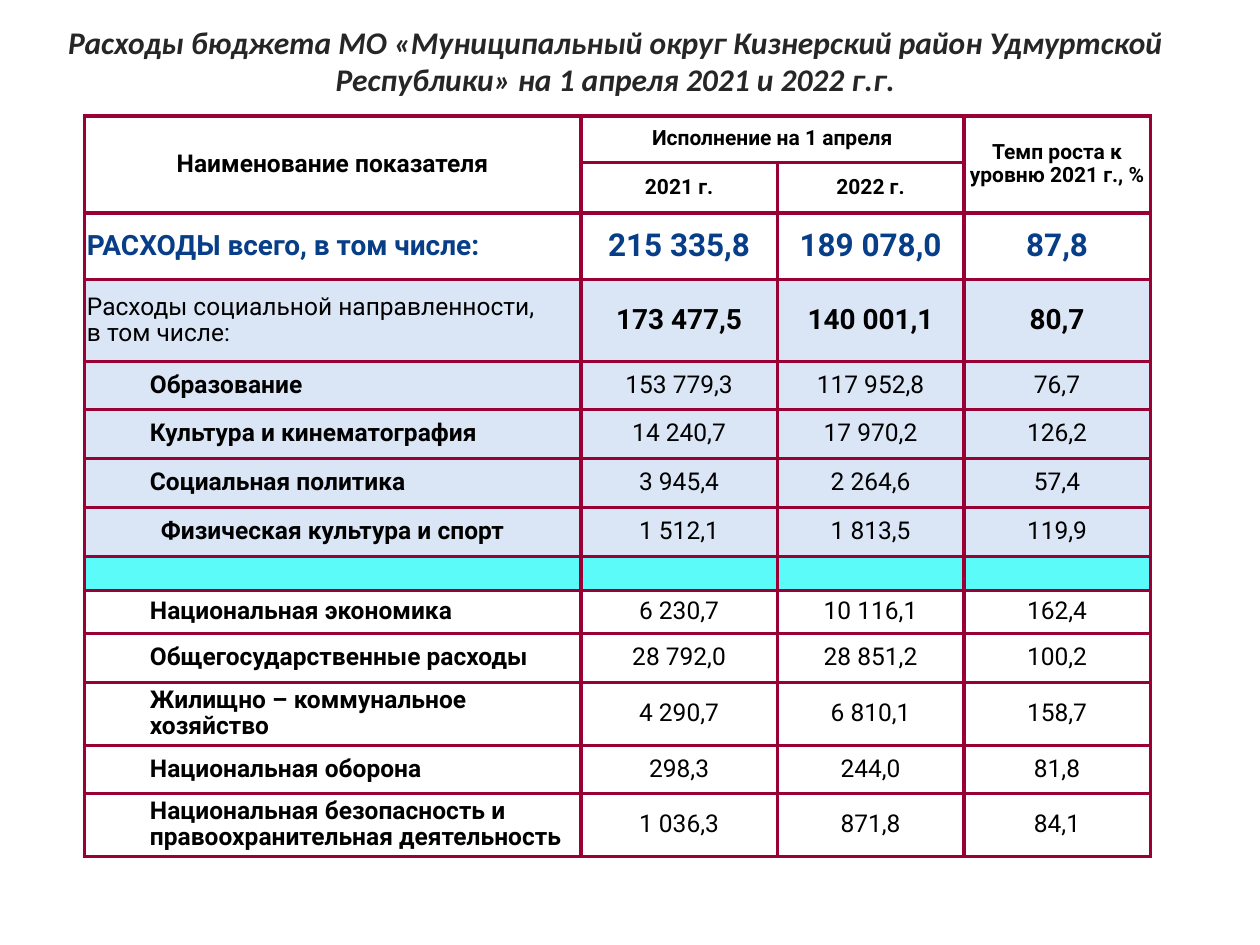
from dataclasses import dataclass

from lxml.etree import SubElement
from pptx import Presentation
from pptx.dml.color import RGBColor
from pptx.enum.text import MSO_ANCHOR as Anchor, MSO_AUTO_SIZE as AutoSize, PP_ALIGN as Align
from pptx.oxml.ns import qn
from pptx.table import Table, _Cell as Cell
from pptx.util import Inches, Pt

WHITE = RGBColor(0xFF, 0xFF, 0xFF)
BLACK = RGBColor(0x00, 0x00, 0x00)
CHARCOAL = RGBColor(0x26, 0x26, 0x26)
NAVY = RGBColor(0x07, 0x3E, 0x87)
PALE_BLUE = RGBColor(0xDA, 0xE6, 0xF6)
CYAN = RGBColor(0x5A, 0xFB, 0xF8)
CRIMSON = RGBColor(0x99, 0x00, 0x33)

TITLE = ("Расходы бюджета МО «Муниципальный округ Кизнерский район Удмуртской "
         "Республики» на 1 апреля 2021 и 2022 г.г.")
COLUMN_WIDTHS = (3.94, 1.56, 1.48, 1.48)
HEADER_HEIGHT = 0.37
HEADER_ROWS = 2
CELL_MARGIN = Inches(0.02)


@dataclass(frozen=True)
class TextStyle:
    size: int = 14
    bold: bool = False
    color: RGBColor = BLACK
    align: Align = Align.CENTER
    indented: bool = False


FIGURE = TextStyle()
ITEM = TextStyle(bold=True, align=Align.LEFT, indented=True)
CENTERED_ITEM = TextStyle(bold=True)
SMALL_HEADER = TextStyle(size=12, bold=True)
TOTAL = TextStyle(size=16, bold=True, color=NAVY, align=Align.LEFT)
TOTAL_FIGURE = TextStyle(size=18, bold=True, color=NAVY)
SUBTOTAL = TextStyle(align=Align.LEFT)
SUBTOTAL_FIGURE = TextStyle(size=16, bold=True)
SPACER = TextStyle(size=8)


@dataclass(frozen=True)
class HeaderCell:
    text: str
    row: int
    column: int
    last_row: int
    last_column: int
    style: TextStyle = SMALL_HEADER


@dataclass(frozen=True)
class BudgetRow:
    height: float
    label: str
    figures: tuple[str, str, str]
    fill: RGBColor = WHITE
    label_style: TextStyle = ITEM
    figure_style: TextStyle = FIGURE


HEADERS = (
    HeaderCell("Наименование показателя", 0, 0, 1, 0, CENTERED_ITEM),
    HeaderCell("Исполнение на 1 апреля", 0, 1, 0, 2),
    HeaderCell("Темп роста к уровню 2021 г., %", 0, 3, 1, 3),
    HeaderCell("2021 г.", 1, 1, 1, 1),
    HeaderCell("2022 г.", 1, 2, 1, 2),
)

BUDGET_ROWS = (
    BudgetRow(0.53, "РАСХОДЫ всего, в том числе:", ("215 335,8", "189 078,0", "87,8"),
              WHITE, TOTAL, TOTAL_FIGURE),
    BudgetRow(0.65, "Расходы социальной направленности,\nв том числе:",
              ("173 477,5", "140 001,1", "80,7"), PALE_BLUE, SUBTOTAL, SUBTOTAL_FIGURE),
    BudgetRow(0.38, "Образование", ("153 779,3", "117 952,8", "76,7"), PALE_BLUE),
    BudgetRow(0.39, "Культура и кинематография", ("14 240,7", "17 970,2", "126,2"), PALE_BLUE),
    BudgetRow(0.39, "Социальная политика", ("3 945,4", "2 264,6", "57,4"), PALE_BLUE),
    BudgetRow(0.39, "Физическая культура и спорт", ("1 512,1", "1 813,5", "119,9"),
              PALE_BLUE, CENTERED_ITEM),
    BudgetRow(0.27, "", ("", "", ""), CYAN, SPACER, SPACER),
    BudgetRow(0.34, "Национальная экономика", ("6 230,7", "10 116,1", "162,4")),
    BudgetRow(0.39, "Общегосударственные расходы", ("28 792,0", "28 851,2", "100,2")),
    BudgetRow(0.5, "Жилищно – коммунальное хозяйство", ("4 290,7", "6 810,1", "158,7")),
    BudgetRow(0.38, "Национальная оборона", ("298,3", "244,0", "81,8")),
    BudgetRow(0.5, "Национальная безопасность и правоохранительная деятельность",
              ("1 036,3", "871,8", "84,1")),
)


def frame_cell(cell: Cell, fill: RGBColor) -> None:
    cell.margin_left = cell.margin_right = CELL_MARGIN
    cell.margin_top = cell.margin_bottom = CELL_MARGIN
    cell.vertical_anchor = Anchor.MIDDLE
    properties = cell._tc.get_or_add_tcPr()
    for side in ("a:lnL", "a:lnR", "a:lnT", "a:lnB"):
        line = SubElement(properties, qn(side), w=str(Pt(2.25)))
        line_fill = SubElement(line, qn("a:solidFill"))
        SubElement(line_fill, qn("a:srgbClr"), val=str(CRIMSON))
    cell.fill.solid()
    cell.fill.fore_color.rgb = fill


def write_cell(cell: Cell, text: str, style: TextStyle) -> None:
    frame = cell.text_frame
    for index, words in enumerate(text.split("\n")):
        para = frame.add_paragraph() if index else frame.paragraphs[0]
        para.alignment = style.align
        para.line_spacing = 0.9
        if style.indented:
            para.level = 1
            properties = para._p.get_or_add_pPr()
            properties.set("marL", str(Inches(0.5)))
            properties.set("indent", "0")
        if not words:
            SubElement(para._p, qn("a:endParaRPr"), sz=str(style.size * 100))
            continue
        span = para.add_run()
        span.text = words
        span.font.name = "Roboto"
        span.font.size = Pt(style.size)
        span.font.bold = style.bold
        span.font.color.rgb = style.color


def fill_headers(table: Table) -> None:
    for row in range(HEADER_ROWS):
        table.rows[row].height = Inches(HEADER_HEIGHT)
        for column in range(len(COLUMN_WIDTHS)):
            frame_cell(table.cell(row, column), WHITE)
    for header in HEADERS:
        cell = table.cell(header.row, header.column)
        if (header.row, header.column) != (header.last_row, header.last_column):
            cell.merge(table.cell(header.last_row, header.last_column))
        write_cell(cell, header.text, header.style)


def fill_budget(table: Table) -> None:
    for row, entry in enumerate(BUDGET_ROWS, HEADER_ROWS):
        table.rows[row].height = Inches(entry.height)
        for column, text in enumerate((entry.label, *entry.figures)):
            cell = table.cell(row, column)
            frame_cell(cell, entry.fill)
            write_cell(cell, text, entry.figure_style if column else entry.label_style)


def main() -> None:
    deck = Presentation()
    deck.slide_width, deck.slide_height = Inches(10), Inches(7.5)
    page = deck.slides.add_slide(deck.slide_layouts[5])

    title = page.shapes.title
    title.left, title.top = Inches(0.16), Inches(0.13)
    title.width, title.height = Inches(9.45), Inches(0.71)
    title.text_frame.word_wrap = True
    title.text_frame.auto_size = AutoSize.SHAPE_TO_FIT_TEXT
    title.text_frame.vertical_anchor = Anchor.TOP
    para = title.text_frame.paragraphs[0]
    para.alignment = Align.CENTER
    span = para.add_run()
    span.text = TITLE
    span.font.name = "Calibri"
    span.font.size = Pt(18)
    span.font.bold = span.font.italic = True
    span.font.color.rgb = CHARCOAL

    height = HEADER_ROWS * HEADER_HEIGHT + sum(entry.height for entry in BUDGET_ROWS)
    table = page.shapes.add_table(
        HEADER_ROWS + len(BUDGET_ROWS), len(COLUMN_WIDTHS),
        Inches(0.67), Inches(0.92), Inches(sum(COLUMN_WIDTHS)), Inches(height),
    ).table
    table.first_row = table.horz_banding = False
    for column, width in zip(table.columns, COLUMN_WIDTHS):
        column.width = Inches(width)
    fill_headers(table)
    fill_budget(table)
    deck.save("out.pptx")


if __name__ == "__main__":
    main()
